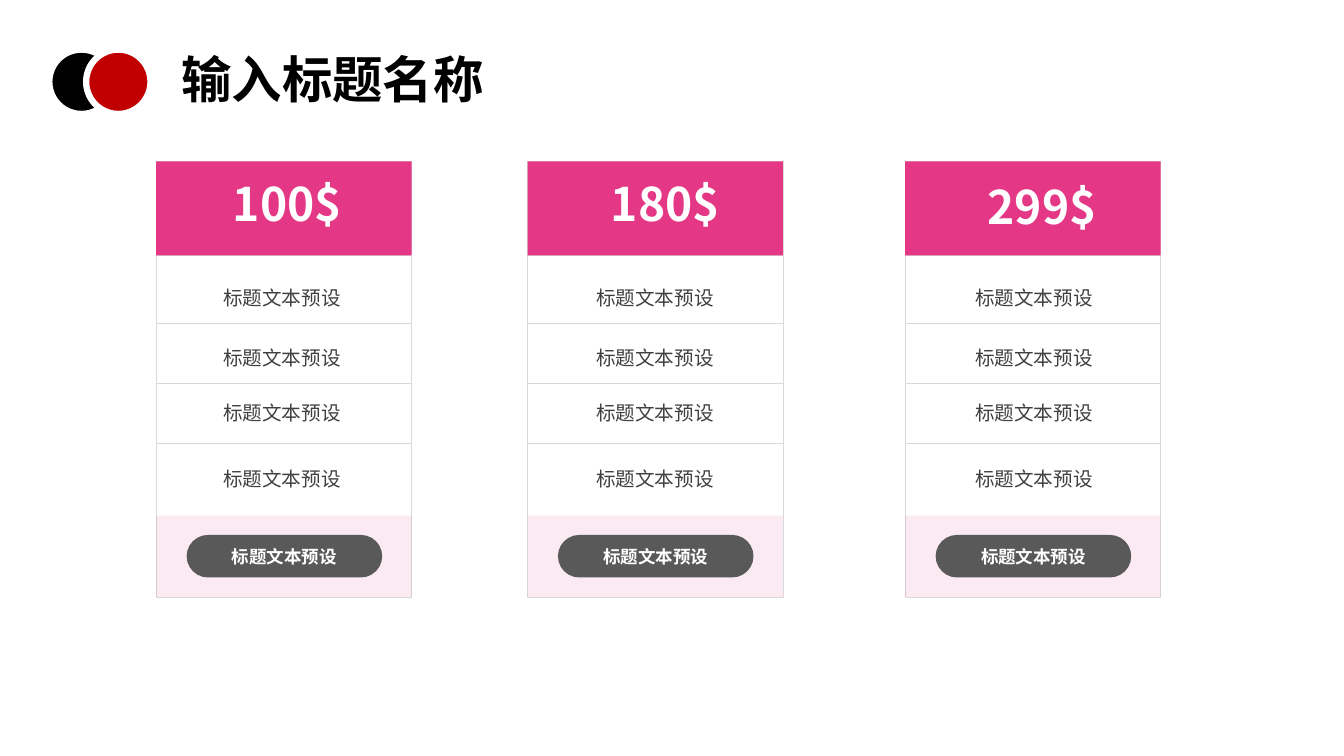
from dataclasses import dataclass

from lxml.etree import SubElement
from pptx import Presentation
from pptx.dml.color import RGBColor
from pptx.enum.shapes import MSO_CONNECTOR, MSO_SHAPE
from pptx.enum.text import MSO_ANCHOR, PP_ALIGN
from pptx.oxml.ns import qn
from pptx.util import Pt


@dataclass(frozen=True)
class Theme:
    font: str = "Noto Sans CJK JP"
    white: str = "FFFFFF"
    black: str = "000000"
    red: str = "C00000"
    pink: str = "E43886"
    border: str = "D9D9D9"
    button: str = "595959"
    body: str = "404040"
    title_size: float = 36
    price_size: float = 33
    feature_size: float = 14
    button_size: float = 12.5


THEME = Theme()
LABEL = "标题文本预设"
CARD_TOP, CARD_WIDTH, CARD_HEIGHT = 115.2, 182.4, 311.2
HEADER_HEIGHT, FOOTER_HEIGHT = 67.2, 58
PILL_WIDTH, PILL_HEIGHT = 139.7, 30.4
FEATURE_TOPS = (202.3, 244.8, 284.4, 331.7)
DIVIDER_TOPS = (182.4, 231, 273.9, 316.8)
CARDS = (
    {"price": "100$", "left": 111.6, "price_left": 166.4, "price_top": 125.3, "feature_left": 131.6},
    {"price": "180$", "left": 376.8, "price_left": 436.3, "price_top": 125.3, "feature_left": 398.1},
    {"price": "299$", "left": 646.6, "price_left": 705.4, "price_top": 127.3, "feature_left": 668.8},
)


def apply_format(target, values):
    for name, value in values.items():
        setattr(target, name, value)


def set_text(shape, text, size, color, bold=False, align=PP_ALIGN.LEFT, inset=None, **frame_format):
    frame = shape.text_frame
    apply_format(frame, frame_format)
    if inset is not None:
        sides = ("margin_left", "margin_top", "margin_right", "margin_bottom")
        apply_format(frame, dict.fromkeys(sides, Pt(inset)))
    paragraph = frame.paragraphs[0]
    paragraph.alignment = align
    run = paragraph.add_run()
    run.text = text
    apply_format(run.font, {"size": Pt(size), "bold": bold, "name": THEME.font})
    run.font.color.rgb = RGBColor.from_string(color)
    SubElement(run._r.get_or_add_rPr(), qn("a:ea"), typeface=THEME.font)


def add_panel(shapes, kind, left, top, width, height, fill, line=None, line_width=0.5, opacity=None):
    shape = shapes.add_shape(kind, Pt(left), Pt(top), Pt(width), Pt(height))
    shape.shadow.inherit = False
    shape.fill.solid()
    shape.fill.fore_color.rgb = RGBColor.from_string(fill)
    if opacity is not None:
        color = shape.fill._xPr.find(".//" + qn("a:srgbClr"))
        SubElement(color, qn("a:alpha"), val=str(opacity * 1000))
    if line:
        shape.line.color.rgb = RGBColor.from_string(line)
        shape.line.width = Pt(line_width)
    else:
        shape.line.fill.background()
    return shape


def add_label(shapes, left, top, width, height, text, size, color, **text_format):
    box = shapes.add_textbox(Pt(left), Pt(top), Pt(width), Pt(height))
    set_text(box, text, size, color, **text_format)


def add_divider(shapes, left, top, width):
    line = shapes.add_connector(MSO_CONNECTOR.STRAIGHT, Pt(left), Pt(top), Pt(left + width), Pt(top))
    line.line.color.rgb = RGBColor.from_string(THEME.border)
    line.line.width = Pt(0.5)
    SubElement(line._element.spPr, qn("a:effectLst"))


def add_card(slide, price, left, price_left, price_top, feature_left):
    shapes = slide.shapes.add_group_shape().shapes
    centered = {"align": PP_ALIGN.CENTER, "vertical_anchor": MSO_ANCHOR.MIDDLE, "word_wrap": False}
    rectangle = MSO_SHAPE.RECTANGLE
    add_panel(shapes, rectangle, left, CARD_TOP, CARD_WIDTH, CARD_HEIGHT, THEME.white, THEME.border)
    add_panel(shapes, rectangle, left, CARD_TOP + CARD_HEIGHT - FOOTER_HEIGHT,
              CARD_WIDTH, FOOTER_HEIGHT, THEME.pink, opacity=10)
    for top in DIVIDER_TOPS:
        add_divider(shapes, left, top, CARD_WIDTH)
    add_panel(shapes, rectangle, left, CARD_TOP, CARD_WIDTH, HEADER_HEIGHT, THEME.pink)
    add_label(shapes, price_left, price_top, 90, 54, price, THEME.price_size, THEME.white,
              bold=True, inset=0, word_wrap=True)
    for top in FEATURE_TOPS:
        add_label(shapes, feature_left, top, PILL_WIDTH, 21, LABEL, THEME.feature_size, THEME.body,
                  inset=0, **centered)
    button = add_panel(shapes, MSO_SHAPE.ROUNDED_RECTANGLE, left + (CARD_WIDTH - PILL_WIDTH) / 2 + 0.4,
                       382.1, PILL_WIDTH, PILL_HEIGHT, THEME.button)
    button.adjustments[0] = 0.5
    set_text(button, LABEL, THEME.button_size, THEME.white, bold=True, **centered)


def add_heading(slide, title):
    shapes = slide.shapes.add_group_shape().shapes
    for left, color in ((35.2, THEME.black), (61.5, THEME.red)):
        add_panel(shapes, MSO_SHAPE.OVAL, left, 35.4, 46, 46, color, THEME.white, 4.5)
    add_label(shapes, 122.4, 31, 254.9, 51, title, THEME.title_size, THEME.black,
              bold=True, word_wrap=True)


def main():
    presentation = Presentation()
    apply_format(presentation, {"slide_width": Pt(960), "slide_height": Pt(540)})
    slide = presentation.slides.add_slide(presentation.slide_layouts[6])
    for card in CARDS:
        add_card(slide, **card)
    add_heading(slide, "输入标题名称")
    presentation.save("out.pptx")


if __name__ == "__main__":
    main()
